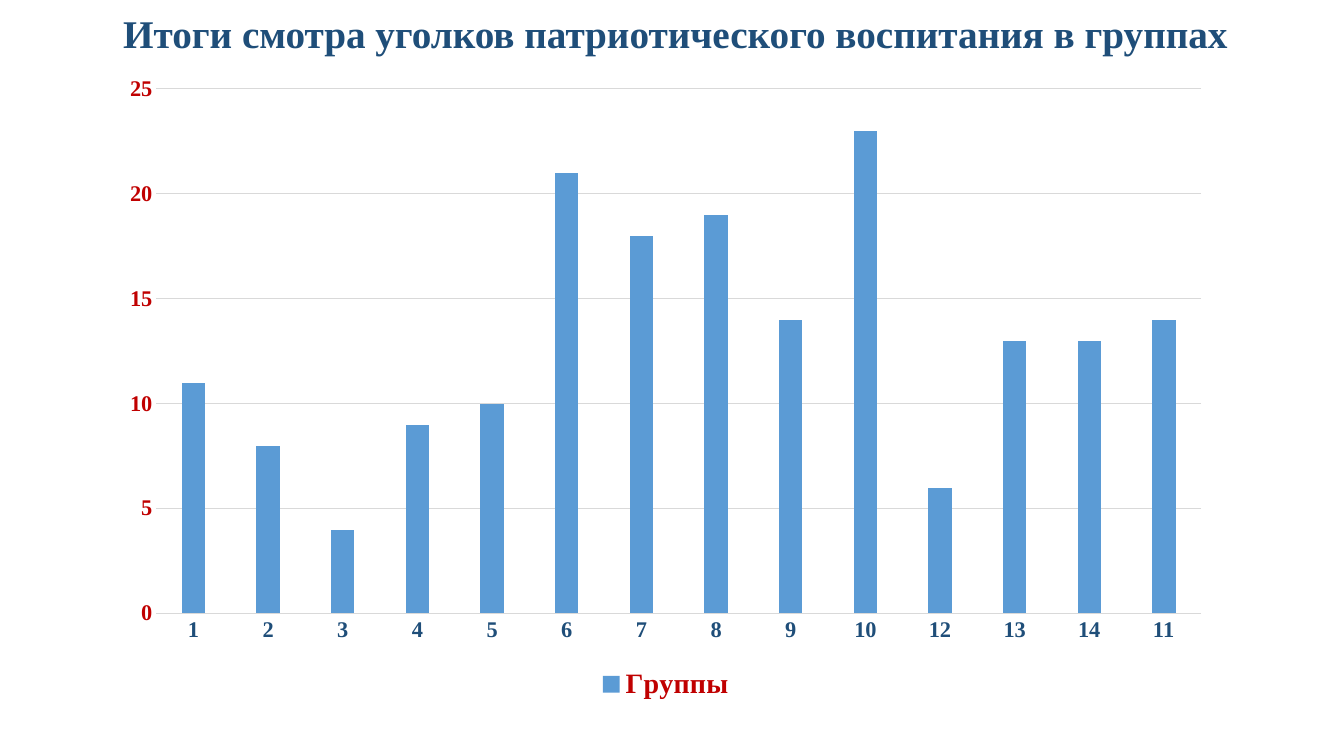
from dataclasses import dataclass

from pptx import Presentation
from pptx.chart.data import CategoryChartData
from pptx.dml.color import RGBColor
from pptx.enum.chart import XL_CHART_TYPE, XL_LEGEND_POSITION, XL_TICK_MARK
from pptx.enum.text import MSO_ANCHOR, MSO_AUTO_SIZE, PP_ALIGN
from pptx.util import Pt


@dataclass(frozen=True)
class Theme:
    face: str = "Times New Roman"
    navy: str = "1F4E79"
    red: str = "C00000"
    bar: str = "5B9BD5"
    grid: str = "D9D9D9"
    title: int = 28
    axis: int = 16
    legend: int = 20


THEME = Theme()
GROUPS = ["1", "2", "3", "4", "5", "6", "7", "8", "9", "10", "12", "13", "14", "11"]
SCORES = [11, 8, 4, 9, 10, 21, 18, 19, 14, 23, 6, 13, 13, 14]


def style(font, size, color, bold=True):
    font.name = THEME.face
    font.size = Pt(size)
    font.bold = bold
    font.color.rgb = RGBColor.from_string(color)


def rule(line):
    line.color.rgb = RGBColor.from_string(THEME.grid)
    line.width = Pt(0.75)


def put_text(frame, text, size, color, align=PP_ALIGN.CENTER, space=0.9):
    frame.word_wrap = True
    frame.auto_size = MSO_AUTO_SIZE.NONE
    frame.vertical_anchor = MSO_ANCHOR.TOP
    para = frame.paragraphs[0]
    para.alignment = align
    para.line_spacing = space
    para.space_before = Pt(0)
    run = para.add_run()
    run.text = text
    style(run.font, size, color)


def add_title(slide, text):
    title = slide.shapes.title
    title.left, title.top = Pt(25.2), Pt(6.5)
    title.width, title.height = Pt(914.4), Pt(40)
    put_text(title.text_frame, text, THEME.title, THEME.navy)


def set_axis(axis, color):
    axis.major_tick_mark = axis.minor_tick_mark = XL_TICK_MARK.NONE
    style(axis.tick_labels.font, THEME.axis, color)


def add_bars(slide, name, groups, scores):
    data = CategoryChartData()
    data.categories = groups
    data.add_series(name, scores)
    chart = slide.shapes.add_chart(
        XL_CHART_TYPE.COLUMN_CLUSTERED, Pt(77), Pt(45.4), Pt(797), Pt(458.6), data
    ).chart
    chart.has_title = False
    chart.font.name = THEME.face

    plot = chart.plots[0]
    plot.gap_width, plot.overlap = 219, -27
    plot.vary_by_categories = False
    fill = plot.series[0].format.fill
    fill.solid()
    fill.fore_color.rgb = RGBColor.from_string(THEME.bar)

    set_axis(chart.category_axis, THEME.navy)
    rule(chart.category_axis.format.line)
    values = chart.value_axis
    set_axis(values, THEME.red)
    values.minimum_scale, values.maximum_scale, values.major_unit = 0, 25, 5
    values.format.line.fill.background()
    rule(values.major_gridlines.format.line)

    chart.has_legend = True
    chart.legend.position = XL_LEGEND_POSITION.BOTTOM
    chart.legend.include_in_layout = False
    style(chart.legend.font, THEME.legend, THEME.red)


def main():
    deck = Presentation()
    deck.slide_width, deck.slide_height = Pt(960), Pt(540)
    slide = deck.slides.add_slide(deck.slide_layouts[5])
    add_title(slide, "Итоги смотра уголков патриотического воспитания в группах")
    add_bars(slide, "Группы", GROUPS, SCORES)
    deck.save("out.pptx")


if __name__ == "__main__":
    main()
